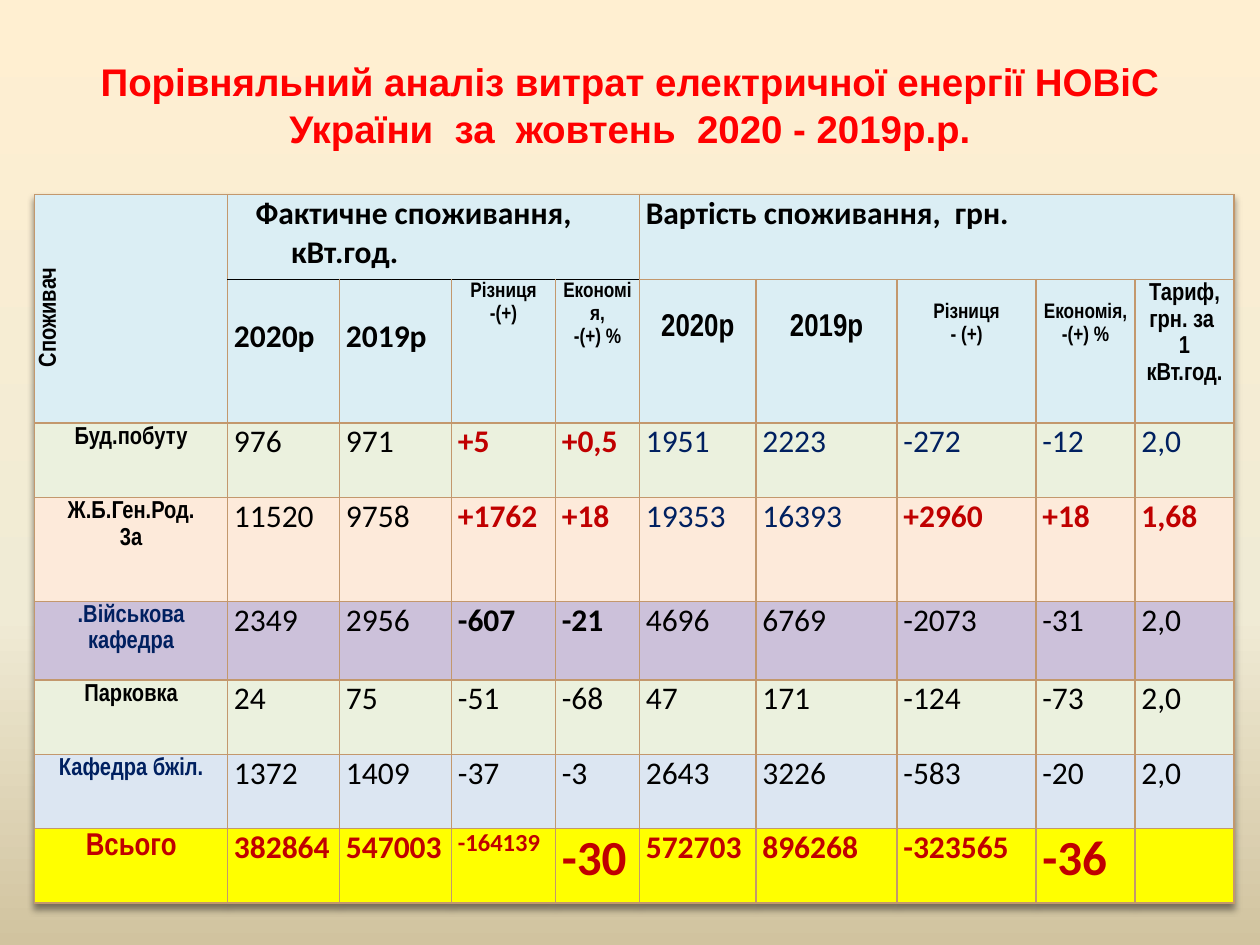
from copy import deepcopy
from dataclasses import dataclass, replace

from lxml.etree import SubElement
from pptx import Presentation
from pptx.dml.color import RGBColor
from pptx.enum.text import MSO_ANCHOR, PP_ALIGN
from pptx.oxml import parse_xml
from pptx.oxml.ns import nsdecls, qn
from pptx.util import Pt

BLACK = RGBColor(0x00, 0x00, 0x00)
RED = RGBColor(0xFF, 0x00, 0x00)
DARK_RED = RGBColor(0xC0, 0x00, 0x00)
NAVY = RGBColor(0x00, 0x20, 0x60)
TAN = RGBColor(0xC3, 0x98, 0x6D)
PALE_BLUE = RGBColor(0xDB, 0xEE, 0xF4)
PALE_GREEN = RGBColor(0xEB, 0xF1, 0xDE)
PALE_ORANGE = RGBColor(0xFD, 0xEA, 0xDA)
LILAC = RGBColor(0xCC, 0xC1, 0xDA)
ICE_BLUE = RGBColor(0xDC, 0xE6, 0xF2)
YELLOW = RGBColor(0xFF, 0xFF, 0x00)
BACKDROP = ((0, RGBColor(0xFF, 0xEF, 0xD1)),
            (0.65, RGBColor(0xF0, 0xEB, 0xD5)),
            (1, RGBColor(0xD1, 0xC3, 0x9F)))

COLUMN_WIDTHS = (110.3, 64, 64, 59.4, 48, 66.6, 80.6, 79.4, 56.6, 56.6)
ROW_HEIGHTS = (48.5, 82, 42.5, 59.4, 45, 42.5, 42.5, 42.5)


@dataclass(frozen=True)
class Look:
    size: float = 18
    color: RGBColor = BLACK
    bold: bool = False
    font: str = "Calibri"
    align: PP_ALIGN = PP_ALIGN.LEFT
    spacing: float = 1.0


@dataclass(frozen=True)
class Heading:
    column: int
    lines: tuple[str, ...]
    look: Look
    top: float = 0  # gap above the text


@dataclass(frozen=True)
class Consumer:
    name: tuple[str, ...]
    name_look: Look
    fill: RGBColor
    groups: tuple[tuple[Look, tuple[str, ...]], ...]


PLAIN = Look()
BOLD = Look(bold=True)
BLUE = Look(color=NAVY)
ALERT = Look(color=DARK_RED, bold=True)
SMALL_ALERT = replace(ALERT, size=14)
BIG_ALERT = replace(ALERT, size=28)
LABEL = Look(14, BLACK, True, "Arial Narrow", PP_ALIGN.CENTER, 1.15)
NAVY_LABEL = replace(LABEL, color=NAVY)
TOTAL_LABEL = replace(LABEL, size=18, color=DARK_RED)
YEAR = replace(LABEL, size=18)
NOTE = replace(LABEL, size=12)

HEADINGS = (
    Heading(1, ("2020р",), BOLD, 22),
    Heading(2, ("2019р",), BOLD, 22),
    Heading(3, ("Різниця", "-(+)"), NOTE),
    Heading(4, ("Економія,", "-(+) %"), NOTE),
    Heading(5, ("2020р",), YEAR, 17),
    Heading(6, ("2019р",), YEAR, 17),
    Heading(7, ("Різниця", "- (+)"), NOTE, 12),
    Heading(8, ("Економія,", "-(+) %"), NOTE, 12),
    Heading(9, ("Тариф,", "грн. за ", "1 кВт.год."), LABEL),
)
CONSUMERS = (
    Consumer(("Буд.побуту",), LABEL, PALE_GREEN, (
        (PLAIN, ("976", "971")),
        (ALERT, ("+5", "+0,5")),
        (BLUE, ("1951", "2223", "-272", "-12", "2,0")))),
    Consumer(("Ж.Б.Ген.Род.", "3а"), LABEL, PALE_ORANGE, (
        (PLAIN, ("11520", "9758")),
        (ALERT, ("+1762", "+18")),
        (BLUE, ("19353", "16393")),
        (ALERT, ("+2960", "+18", "1,68")))),
    Consumer((".Військова", "кафедра"), NAVY_LABEL, LILAC, (
        (PLAIN, ("2349", "2956")),
        (BOLD, ("-607", "-21")),
        (PLAIN, ("4696", "6769", "-2073", "-31", "2,0")))),
    Consumer(("Парковка",), LABEL, PALE_GREEN, (
        (PLAIN, ("24", "75", "-51", "-68", "47", "171", "-124", "-73", "2,0")),)),
    Consumer(("Кафедра бжіл.",), NAVY_LABEL, ICE_BLUE, (
        (PLAIN, ("1372", "1409", "-37", "-3", "2643", "3226", "-583", "-20", "2,0")),)),
    Consumer(("Всього",), TOTAL_LABEL, YELLOW, (
        (ALERT, ("382864", "547003")),
        (SMALL_ALERT, ("-164139",)),
        (BIG_ALERT, ("-30",)),
        (ALERT, ("572703", "896268", "-323565")),
        (BIG_ALERT, ("-36",)))),
)


def write_lines(frame, lines: tuple[str, ...], look: Look) -> None:
    for index, line in enumerate(lines):
        paragraph = frame.add_paragraph() if index else frame.paragraphs[0]
        paragraph.alignment = look.align
        paragraph.line_spacing = look.spacing
        run = paragraph.add_run()
        run.text = line
        run.font.name, run.font.size = look.font, Pt(look.size)
        run.font.bold, run.font.color.rgb = look.bold, look.color


def format_cell(cell, fill: RGBColor, black_edge: str = "") -> None:
    cell.margin_left = cell.margin_right = Pt(3.6)
    cell.margin_top = cell.margin_bottom = 0
    cell.fill.solid()
    cell.fill.fore_color.rgb = fill
    properties = cell._tc.get_or_add_tcPr()
    for index, edge in enumerate(("lnL", "lnR", "lnT", "lnB")):
        color, width = (BLACK, 1) if edge == black_edge else (TAN, 0.79)
        properties.insert(index, parse_xml(
            f'<a:{edge} {nsdecls("a")} w="{Pt(width)}"><a:solidFill>'
            f'<a:srgbClr val="{color}"/></a:solidFill></a:{edge}>'))


def paint_background(slide) -> None:
    fill = slide.background.fill
    fill.gradient()
    fill.gradient_angle = 270
    stop_list = slide.element.find(f".//{qn('a:gsLst')}")
    stop_list.append(deepcopy(stop_list[0]))
    for stop, (position, color) in zip(fill.gradient_stops, BACKDROP):
        stop.position, stop.color.rgb = position, color


def add_title(slide) -> None:
    title = slide.shapes.title
    title.left, title.top, title.width, title.height = Pt(20), Pt(15), Pt(680), Pt(116)
    frame = title.text_frame
    frame.word_wrap = True
    frame.vertical_anchor = MSO_ANCHOR.MIDDLE
    frame.margin_bottom = Pt(30)
    write_lines(frame, ("Порівняльний аналіз витрат електричної енергії НОВіС "
                        "України  за  жовтень  2020 - 2019р.р.",),
                Look(22, RED, True, "Arial", PP_ALIGN.CENTER))


def add_consumption_table(slide) -> None:
    table = slide.shapes.add_table(
        len(ROW_HEIGHTS), len(COLUMN_WIDTHS), Pt(19.8), Pt(111.2),
        Pt(sum(COLUMN_WIDTHS)), Pt(sum(ROW_HEIGHTS))).table
    table.first_row = table.horz_banding = False
    for column, width in zip(table.columns, COLUMN_WIDTHS):
        column.width = Pt(width)
    for row, height in zip(table.rows, ROW_HEIGHTS):
        row.height = Pt(height)

    # Soft shadow under the whole table
    effects = parse_xml(f'<a:effectLst {nsdecls("a")}/>')
    shadow = SubElement(effects, qn("a:outerShdw"), blurRad=str(Pt(4)),
                        dist=str(Pt(3)), dir="5400000", rotWithShape="0")
    tone = SubElement(shadow, qn("a:srgbClr"), val="000000")
    SubElement(tone, qn("a:alpha"), val="45000")
    table._tbl.tblPr.insert(0, effects)

    # Fills and borders, black between the consumption headings
    fills = (PALE_BLUE, PALE_BLUE, *(consumer.fill for consumer in CONSUMERS))
    for row, fill in enumerate(fills):
        for column in range(len(COLUMN_WIDTHS)):
            black_edge = ("lnB", "lnT")[row] if row < 2 and 1 <= column <= 4 else ""
            format_cell(table.cell(row, column), fill, black_edge)

    # Merged headings
    consumer_head, usage_head, cost_head = (table.cell(0, column) for column in (0, 1, 5))
    consumer_head.merge(table.cell(1, 0))
    usage_head.merge(table.cell(0, 4))
    cost_head.merge(table.cell(0, 9))
    write_lines(consumer_head.text_frame, ("Споживач",), LABEL)
    consumer_head.vertical_anchor = MSO_ANCHOR.MIDDLE
    consumer_head._tc.get_or_add_tcPr().set("vert", "vert270")
    # Centred text sits lower when its line ends early
    consumer_head.text_frame.paragraphs[0]._p.get_or_add_pPr().set("marR", str(Pt(10)))
    write_lines(usage_head.text_frame, ("Фактичне споживання,", "кВт.год."), BOLD)
    for paragraph, indent in zip(usage_head.text_frame.paragraphs, (12.3, 32.6)):
        paragraph._p.get_or_add_pPr().set("marL", str(Pt(indent)))
    write_lines(cost_head.text_frame, ("Вартість споживання,  грн.",), BOLD)

    # Column headings
    for heading in HEADINGS:
        cell = table.cell(1, heading.column)
        cell.margin_top = Pt(heading.top)
        write_lines(cell.text_frame, heading.lines, heading.look)

    # Consumers and their values
    for row, consumer in enumerate(CONSUMERS, start=2):
        write_lines(table.cell(row, 0).text_frame, consumer.name, consumer.name_look)
        values = [(look, text) for look, texts in consumer.groups for text in texts]
        for column, (look, text) in enumerate(values, start=1):
            write_lines(table.cell(row, column).text_frame, (text,), look)


def main() -> None:
    deck = Presentation()
    deck.slide_width, deck.slide_height = Pt(720), Pt(540)
    slide = deck.slides.add_slide(deck.slide_layouts[0])
    subtitle = slide.placeholders[1].element
    subtitle.getparent().remove(subtitle)
    paint_background(slide)
    add_title(slide)
    add_consumption_table(slide)
    deck.save("out.pptx")


if __name__ == "__main__":
    main()
